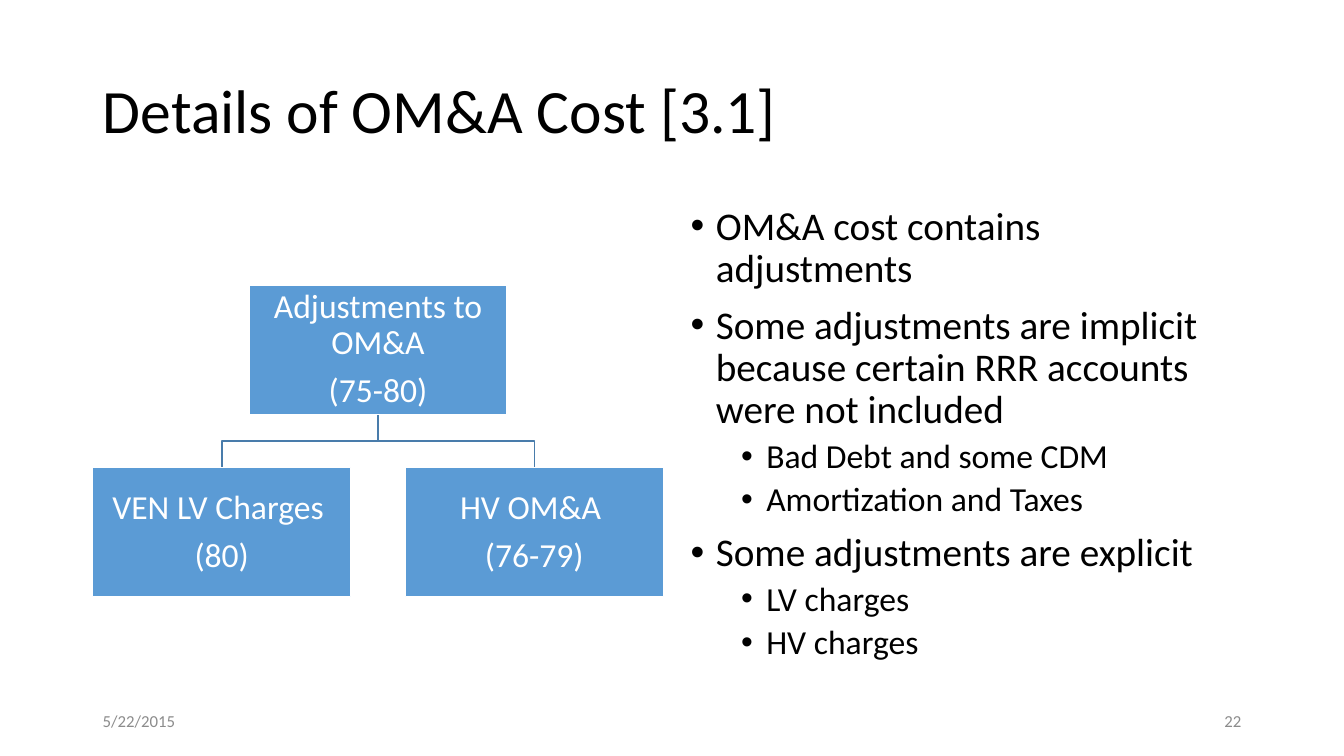
from lxml.etree import SubElement
from pptx import Presentation
from pptx.dml.color import RGBColor
from pptx.enum.shapes import MSO_SHAPE
from pptx.enum.text import MSO_ANCHOR, MSO_AUTO_SIZE, PP_ALIGN
from pptx.oxml.ns import qn
from pptx.util import Inches, Pt

# Content
TITLE = "Details of OM&A Cost [3.1]"
BULLETS = [
    (0, "OM&A cost contains adjustments"),
    (0, "Some adjustments are implicit because certain RRR accounts were not included"),
    (1, "Bad Debt and some CDM"),
    (1, "Amortization and Taxes"),
    (0, "Some adjustments are explicit"),
    (1, "LV charges"),
    (1, "HV charges"),
]
PARENT = ("Adjustments to OM&A", "(75-80)")
CHILDREN = [("VEN LV Charges ", "(80)"), ("HV OM&A ", "(76-79)")]
DATE, PAGE = "5/22/2015", "22"

# Style: size, space before and left indent for each bullet level
LEVELS = [(28, 10, 0.25), (24, 5, 0.75)]
FONT = "Calibri"
BLACK = RGBColor(0x00, 0x00, 0x00)
WHITE = RGBColor(0xFF, 0xFF, 0xFF)
GREY = RGBColor(0x8C, 0x8C, 0x8C)
BLUE = RGBColor(0x5B, 0x9B, 0xD5)
BRANCH_BLUE = RGBColor(0x49, 0x7C, 0xAB)

# Grid in inches
WIDTH, HEIGHT = 13.33, 7.5
MARGIN = 0.92
RIGHT = WIDTH - MARGIN
BODY_LEFT, BODY_TOP, BODY_HEIGHT = 6.75, 2, 4.76
BOX_WIDTH, BOX_HEIGHT = 2.56, 1.28
COLUMN_STEP, ROW_STEP = 3.1, 1.81
TREE_TOP = 2.83
FOOTER_TOP, FOOTER_WIDTH, FOOTER_HEIGHT = 6.95, 3, 0.4


def add_run(paragraph, text, size, color):
    run = paragraph.add_run()
    run.text = text
    run.font.name = FONT
    run.font.size = Pt(size)
    run.font.color.rgb = color


def place(shape, left, top, width, height):
    shape.left, shape.top = Inches(left), Inches(top)
    shape.width, shape.height = Inches(width), Inches(height)


def paragraph_at(frame, index):
    return frame.add_paragraph() if index else frame.paragraphs[0]


def add_box(slide, left, top, lines):
    box = slide.shapes.add_shape(MSO_SHAPE.RECTANGLE, Inches(left), Inches(top),
                                 Inches(BOX_WIDTH), Inches(BOX_HEIGHT))
    box.shadow.inherit = False
    box.fill.solid()
    box.fill.fore_color.rgb = BLUE
    box.line.color.rgb = WHITE
    box.line.width = Pt(1)
    frame = box.text_frame
    frame.word_wrap = True
    frame.vertical_anchor = MSO_ANCHOR.MIDDLE
    frame.margin_left = frame.margin_right = Inches(0.02)
    frame.margin_top = frame.margin_bottom = Inches(0.02)
    for index, text in enumerate(lines):
        paragraph = paragraph_at(frame, index)
        paragraph.alignment = PP_ALIGN.CENTER
        paragraph.line_spacing = 0.9
        paragraph.space_after = Pt(8.4)
        add_run(paragraph, text, 24, WHITE)


def add_branch(slide, start, end):
    middle = (start[1] + end[1]) / 2
    corners = [start, (start[0], middle), (end[0], middle), end]
    points = [(Inches(x), Inches(y)) for x, y in corners]
    builder = slide.shapes.build_freeform(*points[0])
    builder.add_line_segments(points[1:], close=False)
    branch = builder.convert_to_shape()
    branch.shadow.inherit = False
    branch.fill.background()
    branch.line.color.rgb = BRANCH_BLUE
    branch.line.width = Pt(1)


def add_footer(slide, left, text, alignment):
    footer = slide.shapes.add_textbox(Inches(left), Inches(FOOTER_TOP),
                                      Inches(FOOTER_WIDTH), Inches(FOOTER_HEIGHT))
    footer.text_frame.word_wrap = True
    footer.text_frame.vertical_anchor = MSO_ANCHOR.MIDDLE
    paragraph = footer.text_frame.paragraphs[0]
    paragraph.alignment = alignment
    add_run(paragraph, text, 12, GREY)


def main():
    presentation = Presentation()
    presentation.slide_width, presentation.slide_height = Inches(WIDTH), Inches(HEIGHT)
    slide = presentation.slides.add_slide(presentation.slide_layouts[1])

    # Title
    title = slide.shapes.title
    place(title, MARGIN, 0.4, RIGHT - MARGIN, 1.45)
    title.text_frame.vertical_anchor = MSO_ANCHOR.MIDDLE
    paragraph = title.text_frame.paragraphs[0]
    paragraph.alignment = PP_ALIGN.LEFT
    paragraph.line_spacing = 0.9
    add_run(paragraph, TITLE, 44, BLACK)

    # Bullet list
    body = slide.placeholders[1]
    place(body, BODY_LEFT, BODY_TOP, RIGHT - BODY_LEFT, BODY_HEIGHT)
    body.text_frame.auto_size = MSO_AUTO_SIZE.NONE
    for index, (level, text) in enumerate(BULLETS):
        size, space_before, indent = LEVELS[level]
        paragraph = paragraph_at(body.text_frame, index)
        paragraph.level = level
        paragraph.line_spacing = 0.9
        paragraph.space_before = Pt(space_before)
        add_run(paragraph, text, size, BLACK)
        properties = paragraph._p.get_or_add_pPr()
        properties.set("marL", str(Inches(indent)))
        properties.set("indent", str(Inches(-0.25)))
        SubElement(properties, qn("a:buFont")).set("typeface", "Arial")
        SubElement(properties, qn("a:buChar")).set("char", "•")

    # Tree: branches first, then the boxes
    child_lefts = [MARGIN + column * COLUMN_STEP for column in range(len(CHILDREN))]
    child_top = TREE_TOP + ROW_STEP
    parent_left = sum(child_lefts) / len(child_lefts)
    half = BOX_WIDTH / 2
    for left in child_lefts:
        add_branch(slide, (parent_left + half, TREE_TOP + BOX_HEIGHT), (left + half, child_top))
    add_box(slide, parent_left, TREE_TOP, PARENT)
    for left, lines in zip(child_lefts, CHILDREN):
        add_box(slide, left, child_top, lines)

    # Page number and date
    add_footer(slide, RIGHT - FOOTER_WIDTH, PAGE, PP_ALIGN.RIGHT)
    add_footer(slide, MARGIN, DATE, PP_ALIGN.LEFT)

    presentation.save("out.pptx")


if __name__ == "__main__":
    main()
